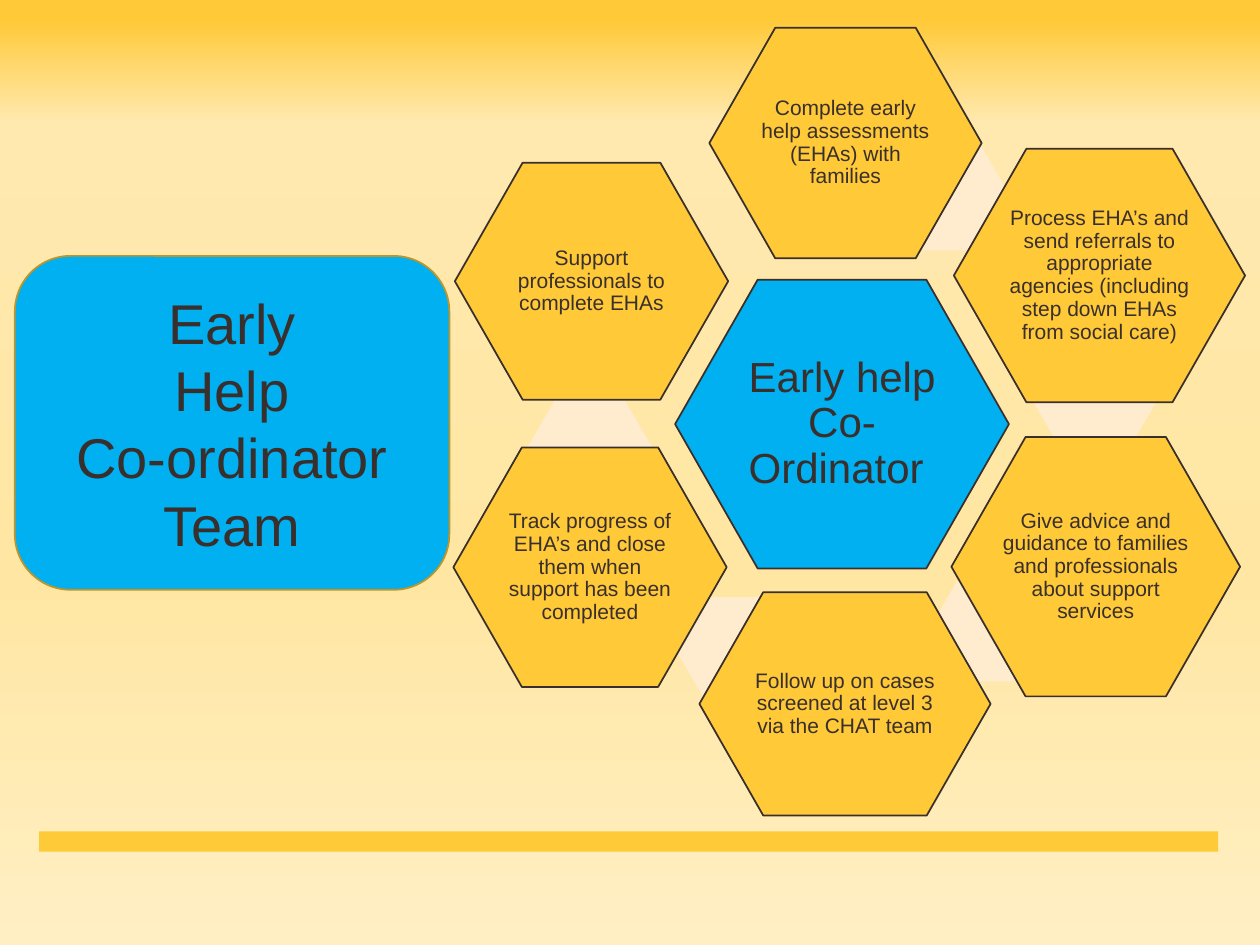
from lxml import etree
from pptx import Presentation, util as u
from pptx.dml.color import RGBColor
from pptx.enum import shapes, text
from pptx.oxml.ns import qn

AMBER = RGBColor(0xFF, 0xC9, 0x37)
BAR_AMBER = RGBColor(0xFF, 0xCA, 0x38)
BLUE = RGBColor(0x00, 0xB0, 0xF0)
CREAM = RGBColor(0xFF, 0xEB, 0xCE)
DARK = RGBColor(0x39, 0x2F, 0x2C)
OCHRE = RGBColor(0xBD, 0x95, 0x29)

# Background stops: position in percent, colour
STOPS = [
    (2, AMBER),
    (13, RGBColor(0xFF, 0xE9, 0xAF)),
    (61, RGBColor(0xFF, 0xE6, 0xA3)),
    (100, RGBColor(0xFF, 0xEF, 0xC3)),
]

# Left, top, width, height in cm
TASKS = [
    ("Complete early help assessments (EHAs) with families", (14.3, 0.56, 5.49, 4.65)),
    ("Process EHA’s and send referrals to appropriate agencies "
     "(including step down EHAs from social care)", (19.23, 3, 5.87, 5.11)),
    ("Give advice and guidance to families and professionals about support services",
     (19.18, 8.81, 5.82, 5.23)),
    ("Follow up on cases screened at level 3 via the CHAT team", (14.1, 11.94, 5.87, 4.5)),
    ("Track progress of EHA’s and close them when support has been completed",
     (9.14, 9.02, 5.51, 4.83)),
    ("Support professionals to complete EHAs", (9.17, 3.28, 5.51, 4.78)),
]
LINK_SPOTS = [(17.83, 2.87), (20.8, 6.96), (18.75, 11.56), (13.64, 12.04), (10.62, 7.95)]
LINK_SIZE = (2.54, 2.18)
TEXT_SHARE = 0.67  # part of a hexagon that its label takes up


def write(tf, content, size=12, color=DARK, font="Arial", spacing=1.0, inset=None):
    """Fill a text frame with centred text, one paragraph per line."""
    tf.word_wrap = True
    tf.vertical_anchor = text.MSO_ANCHOR.MIDDLE
    if inset is not None:
        tf.margin_left = tf.margin_right = tf.margin_top = tf.margin_bottom = u.Cm(inset)
    for i, line in enumerate(content.split("\n")):
        p = tf.add_paragraph() if i else tf.paragraphs[0]
        p.alignment = text.PP_ALIGN.CENTER
        p.line_spacing = spacing
        r = p.add_run()
        r.text = line
        r.font.name, r.font.size = font, u.Pt(size)
        r.font.color.rgb = color


class Deck:
    def __init__(self):
        self.prs = Presentation()
        self.prs.slide_width, self.prs.slide_height = u.Cm(25.4), u.Cm(19.05)
        self.s = self.prs.slides.add_slide(self.prs.slide_layouts[6])

    def background(self, stops):
        fill = self.s.background.fill
        fill.gradient()
        fill.gradient_angle = 270
        gs_list = next(self.s.background._cSld.iter(qn("a:gsLst")))
        for gs in list(gs_list):
            gs_list.remove(gs)
        for pos, color in stops:
            gs = etree.SubElement(gs_list, qn("a:gs"), pos=str(pos * 1000))
            etree.SubElement(gs, qn("a:srgbClr"), val=str(color))

    def shape(self, kind, box, fill, line=None):
        sp = self.s.shapes.add_shape(kind, *map(u.Cm, box))
        sp.shadow.inherit = False
        sp.fill.solid()
        sp.fill.fore_color.rgb = fill
        if line is None:
            sp.line.fill.background()
        else:
            sp.line.color.rgb = line
            sp.line.width = u.Pt(1)
        return sp

    def link(self, spot):
        sp = self.shape(shapes.MSO_SHAPE.HEXAGON, spot + LINK_SIZE, CREAM)
        sp.adjustments[0] = 0.29

    def hexagon(self, label, box, fill=AMBER, size=12, inset=0.05):
        sp = self.shape(shapes.MSO_SHAPE.HEXAGON, box, fill, DARK)
        sp.adjustments[0] = 0.286
        left, top, width, height = box
        margin = (1 - TEXT_SHARE) / 2
        area = (left + width * margin, top + height * margin,
                width * TEXT_SHARE, height * TEXT_SHARE)
        tb = self.s.shapes.add_textbox(*map(u.Cm, area))
        write(tb.text_frame, label, size=size, spacing=0.9, inset=inset)

    def panel(self, label, box):
        sp = self.shape(shapes.MSO_SHAPE.ROUNDED_RECTANGLE, box, BLUE, OCHRE)
        write(sp.text_frame, label, size=32)


def main():
    deck = Deck()

    # Backdrop and bottom bar
    deck.background(STOPS)
    deck.shape(shapes.MSO_SHAPE.RECTANGLE, (0.79, 16.76, 23.77, 0.41), BAR_AMBER)

    # Hexagon ring around the co-ordinator
    for spot in LINK_SPOTS:
        deck.link(spot)
    deck.hexagon("Early help Co-Ordinator ", (13.61, 5.64, 6.73, 5.82),
                 fill=BLUE, size=24, inset=0.08)
    for label, box in TASKS:
        deck.hexagon(label, box)

    # Title panel
    deck.panel("Early\nHelp\nCo-ordinator Team", (0.3, 5.16, 8.76, 6.73))

    deck.prs.save("out.pptx")


if __name__ == "__main__":
    main()
